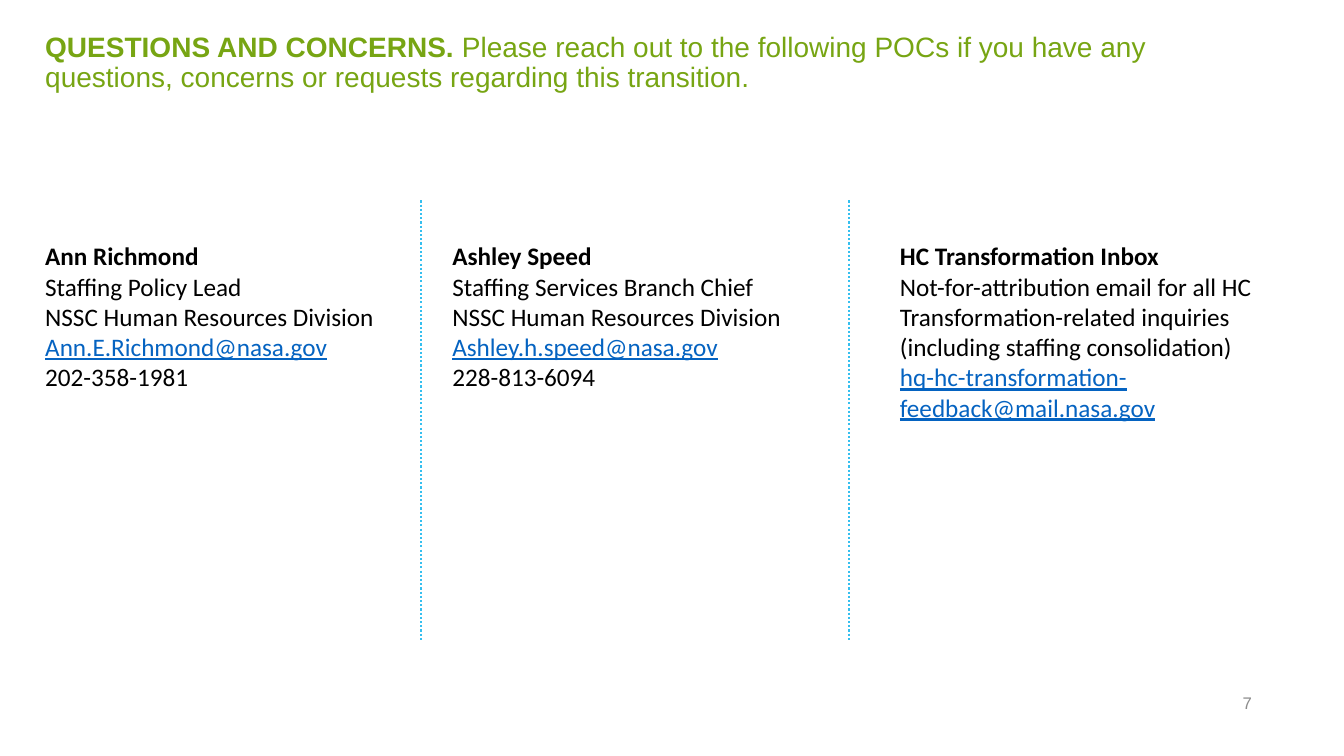
import dataclasses

import pptx
import pptx.dml.color
import pptx.enum.dml
import pptx.enum.shapes
import pptx.enum.text
import pptx.oxml
import pptx.oxml.ns
import pptx.util

Cm = pptx.util.Cm

COLORS = {
    "heading": "77A513",
    "body": "000000",
    "email": "0563C1",
    "divider": "35BFEF",
    "page": "8C8C8C",
}


@dataclasses.dataclass(frozen=True)
class Contact:
    left: float
    height: float
    name: str
    details: tuple[str, ...]


CONTACTS = (
    Contact(0.89, 4.11, "Ann Richmond", (
        "Staffing Policy Lead",
        "NSSC Human Resources Division",
        "Ann.E.Richmond@nasa.gov",
        "202-358-1981",
    )),
    Contact(11.15, 4.11, "Ashley Speed", (
        "Staffing Services Branch Chief",
        "NSSC Human Resources Division",
        "Ashley.h.speed@nasa.gov",
        "228-813-6094",
    )),
    Contact(22.43, 4.88, "HC Transformation Inbox", (
        "Not-for-attribution email for all HC Transformation-related inquiries "
        "(including staffing consolidation)",
        "hq-hc-transformation-feedback@mail.nasa.gov",
    )),
)
CONTACT_TOP, CONTACT_WIDTH = 5.94, 9.73
DIVIDERS = (10.62, 21.39)
DIVIDER_TOP, DIVIDER_BOTTOM = 5.05, 16.13


def color(name: str) -> pptx.dml.color.RGBColor:
    return pptx.dml.color.RGBColor.from_string(COLORS[name])


def add_text_frame(slide, left: float, top: float, width: float, height: float):
    frame = slide.shapes.add_textbox(Cm(left), Cm(top), Cm(width), Cm(height)).text_frame
    frame.word_wrap = True
    return frame


def style(run, font: str, size: float, color_name: str, bold: bool = False) -> None:
    run.font.name = font
    run.font.size = pptx.util.Pt(size)
    run.font.bold = bold
    run.font.color.rgb = color(color_name)


def add_heading(slide) -> None:
    heading = add_text_frame(slide, 0.89, 0.71, 30.15, 1.88).paragraphs[0]
    heading.line_spacing = 0.9
    for text, bold in (
        ("QUESTIONS AND CONCERNS. ", True),
        ("Please reach out to the following POCs if you have any questions, "
         "concerns or requests regarding this transition.", False),
    ):
        run = heading.add_run()
        run.text = text
        style(run, "Arial", 20, "heading", bold)


def add_contact(slide, contact: Contact) -> None:
    frame = add_text_frame(slide, contact.left, CONTACT_TOP, CONTACT_WIDTH, contact.height)
    frame.text = "\n".join((contact.name, *contact.details))
    frame.auto_size = pptx.enum.text.MSO_AUTO_SIZE.SHAPE_TO_FIT_TEXT
    for index, paragraph in enumerate(frame.paragraphs):
        is_email = "@" in paragraph.text
        for run in paragraph.runs:
            style(run, "Calibri", 18, "email" if is_email else "body", index == 0)
            run.font.underline = is_email


def add_divider(slide, x: float) -> None:
    divider = slide.shapes.add_connector(
        pptx.enum.shapes.MSO_CONNECTOR.STRAIGHT,
        Cm(x), Cm(DIVIDER_TOP), Cm(x), Cm(DIVIDER_BOTTOM),
    )
    divider.line.color.rgb = color("divider")
    divider.line.width = pptx.util.Pt(1.5)
    divider.line.dash_style = pptx.enum.dml.MSO_LINE.ROUND_DOT
    divider._element.spPr.append(pptx.oxml.parse_xml(
        f"<a:effectLst {pptx.oxml.ns.nsdecls('a')}/>"
    ))


def add_page_number(slide) -> None:
    frame = add_text_frame(slide, 23.93, 17.2, 7.62, 1.02)
    frame.margin_right = 0
    frame.vertical_anchor = pptx.enum.text.MSO_ANCHOR.MIDDLE
    frame.text = "7"
    number = frame.paragraphs[0]
    number.alignment = pptx.enum.text.PP_ALIGN.RIGHT
    style(number.runs[0], "Arial", 12, "page")


def main() -> None:
    presentation = pptx.Presentation()
    presentation.slide_width = Cm(33.87)
    presentation.slide_height = Cm(19.05)
    slide = presentation.slides.add_slide(presentation.slide_layouts[6])
    add_page_number(slide)
    add_heading(slide)
    for contact in CONTACTS:
        add_contact(slide, contact)
    for x in DIVIDERS:
        add_divider(slide, x)
    presentation.save("out.pptx")


if __name__ == "__main__":
    main()
